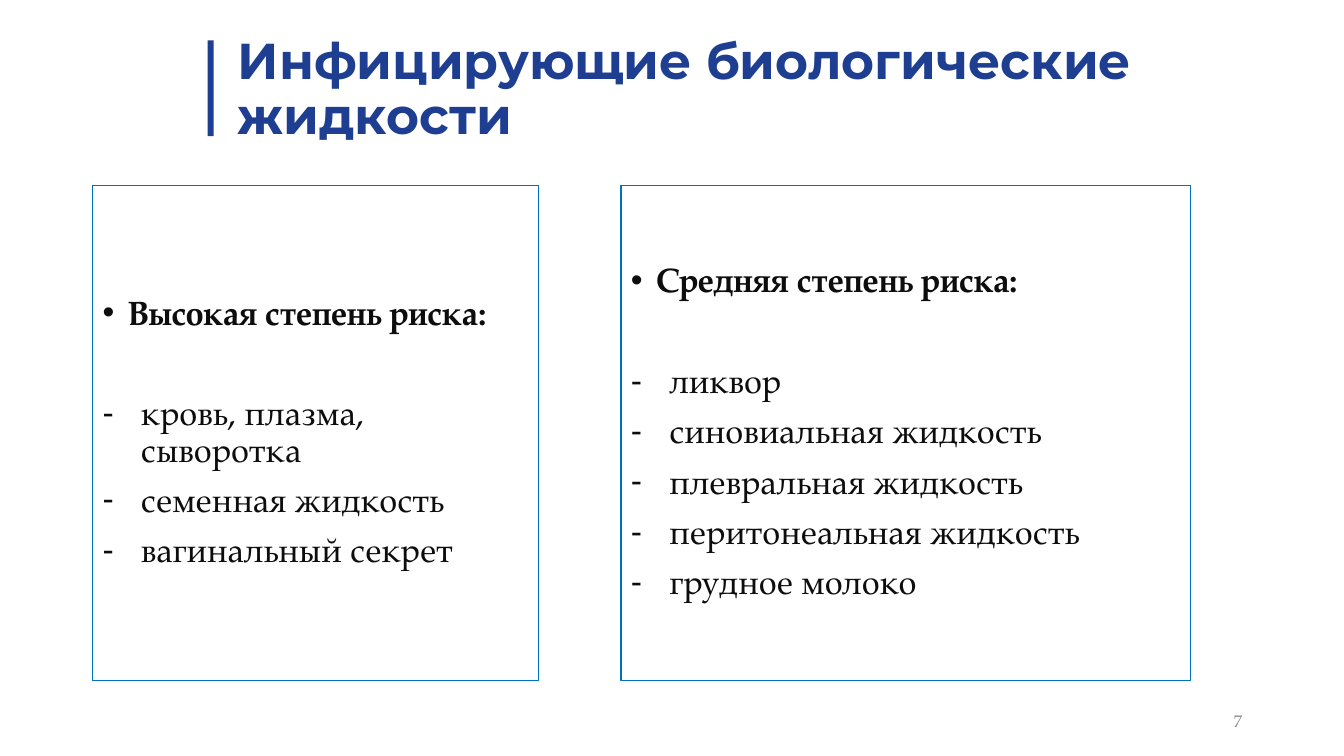
from dataclasses import dataclass

from lxml.etree import SubElement
from pptx import Presentation
from pptx.dml.color import RGBColor
from pptx.enum.shapes import MSO_SHAPE
from pptx.enum.text import MSO_ANCHOR, PP_ALIGN
from pptx.oxml.ns import qn
from pptx.shapes.autoshape import Shape
from pptx.slide import Slide
from pptx.text.text import _Paragraph
from pptx.util import Emu, Pt

SCALE = 9144
NAVY, BLUE, WHITE, INK, GRAY = "1D3E91", "0070C0", "FFFFFF", "0D0D0D", "8C8C8C"
HEAD, BODY = "Montserrat", "TeX Gyre Pagella"


@dataclass
class Box:
    left: int
    top: int
    width: int
    height: int


@dataclass
class Panel:
    box: Box
    title: str
    items: list[str]


PANELS = [
    Panel(Box(92, 184, 442, 491), "Высокая степень риска:",
          ["кровь, плазма, сыворотка", "семенная жидкость", "вагинальный секрет"]),
    Panel(Box(616, 184, 565, 491), "Средняя степень риска:",
          ["ликвор", "синовиальная жидкость", "плевральная жидкость",
           "перитонеальная жидкость", "грудное молоко"]),
]


def px(size: int) -> Emu:
    """Turn px into EMU."""
    return Emu(size * SCALE)


def place(box: Box) -> tuple[Emu, Emu, Emu, Emu]:
    """Give the box as left, top, width and height in EMU."""
    return px(box.left), px(box.top), px(box.width), px(box.height)


def color(code: str) -> RGBColor:
    """Turn a hex string into a colour."""
    return RGBColor.from_string(code)


def style(para: _Paragraph, face: str, size: int, code: str, bold: bool = False) -> None:
    """Set the font of a paragraph."""
    font = para.font
    font.name, font.size, font.bold = face, Pt(size), bold
    font.color.rgb = color(code)


def bullet(para: _Paragraph, mark: str, indent: int) -> None:
    """Give a paragraph a bullet and a hanging indent."""
    props = para._p.get_or_add_pPr()
    props.set("marL", str(px(indent)))
    props.set("indent", str(px(-indent)))
    SubElement(props, qn("a:buFont")).set("typeface", "Arial")
    SubElement(props, qn("a:buChar")).set("char", mark)


def add_rect(slide: Slide, box: Box, fill: str, line: str | None = None) -> Shape:
    """Draw a plain rectangle."""
    shape = slide.shapes.add_shape(MSO_SHAPE.RECTANGLE, *place(box))
    shape.shadow.inherit = False
    shape.fill.solid()
    shape.fill.fore_color.rgb = color(fill)
    if line:
        shape.line.color.rgb = color(line)
        shape.line.width = Pt(1)
    else:
        shape.line.fill.background()
    return shape


def add_label(slide: Slide, box: Box, text: str) -> _Paragraph:
    """Add a one-paragraph text box and return its paragraph."""
    frame = slide.shapes.add_textbox(*place(box)).text_frame
    frame.word_wrap = True
    frame.vertical_anchor = MSO_ANCHOR.MIDDLE
    para = frame.paragraphs[0]
    para.text = text
    return para


def add_panel(slide: Slide, panel: Panel) -> None:
    """Draw a framed list with a bold heading."""
    frame = add_rect(slide, panel.box, WHITE, BLUE).text_frame
    frame.word_wrap = True
    frame.vertical_anchor = MSO_ANCHOR.MIDDLE
    for row, text in enumerate([panel.title, *panel.items]):
        top = row == 0
        para = frame.paragraphs[0] if top else frame.add_paragraph()
        para.text = text
        para.alignment = PP_ALIGN.LEFT
        para.line_spacing = 0.9
        if not top:
            para.space_before = Pt(46 if row == 1 else 10)
        bullet(para, "•" if top else "-", 25 if top else 38)
        style(para, BODY, 24, INK, top)


def main() -> None:
    """Build and save the slide."""
    deck = Presentation()
    deck.slide_width, deck.slide_height = px(1333), px(750)
    slide = deck.slides.add_slide(deck.slide_layouts[6])
    add_rect(slide, Box(206, 40, 6, 95), NAVY)
    title = add_label(slide, Box(226, 43, 1015, 94), "Инфицирующие биологические жидкости")
    title.line_spacing = 0.9
    style(title, HEAD, 36, NAVY, True)
    number = add_label(slide, Box(942, 695, 300, 40), "7")
    number.alignment = PP_ALIGN.RIGHT
    style(number, BODY, 12, GRAY)
    for panel in PANELS:
        add_panel(slide, panel)
    deck.save("out.pptx")


if __name__ == "__main__":
    main()
